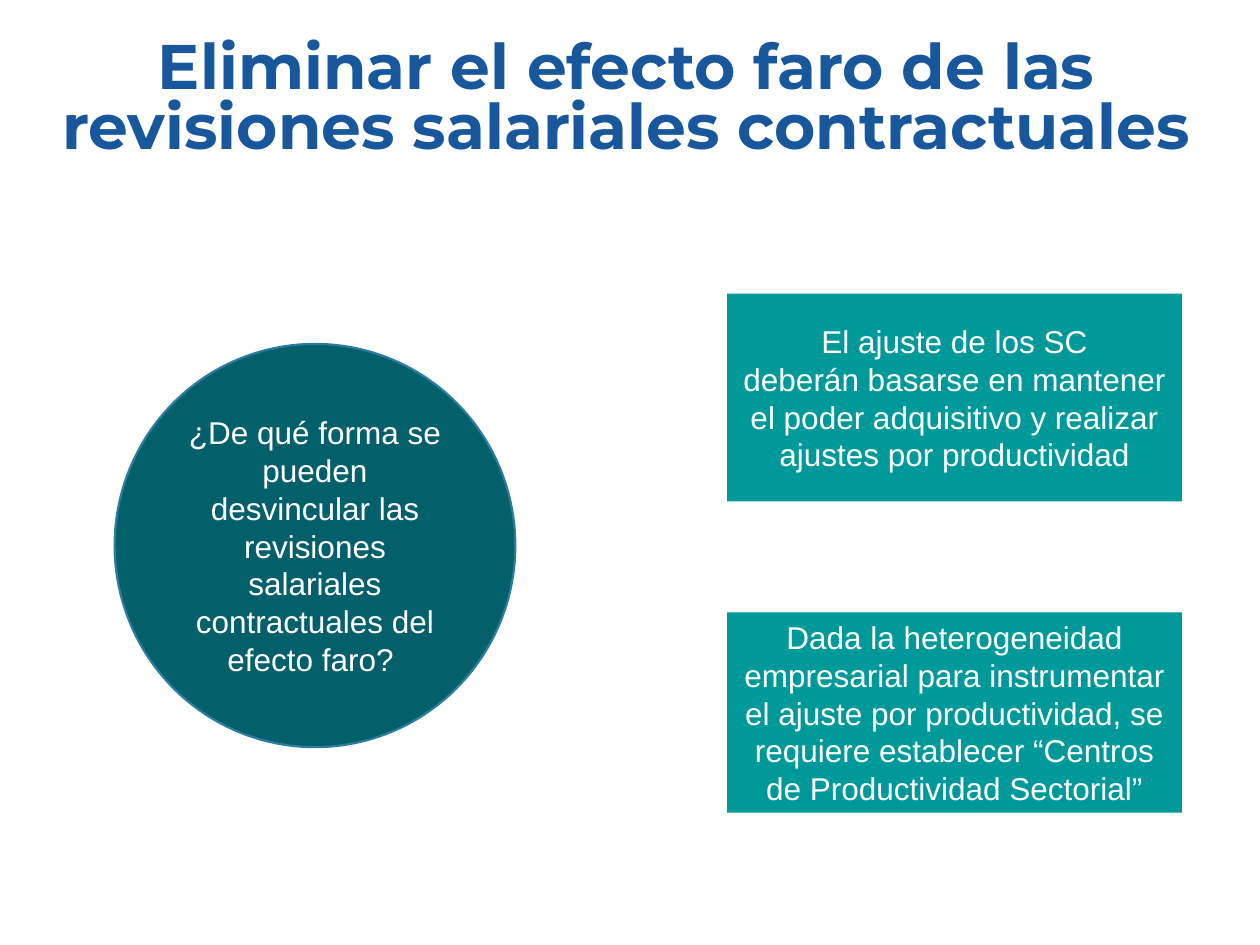
from pptx import Presentation
from pptx.dml.color import RGBColor
from pptx.enum import shapes, text
from pptx.util import Inches, Pt

BLUE = RGBColor(0x18, 0x57, 0x9B)
DARK = RGBColor(0x03, 0x60, 0x6A)
EDGE = RGBColor(0x2C, 0x7C, 0x9F)
TEAL = RGBColor(0x00, 0x99, 0x99)
WHITE = RGBColor(0xFF, 0xFF, 0xFF)

HEAD = {"name": "Montserrat", "size": Pt(36), "bold": True}
BODY = {"name": "Arial", "size": Pt(18), "bold": False}


def write(frame, lines, font, color, gap=None):
    """Fill a text frame with centred paragraphs in one format."""
    frame.word_wrap = True
    frame.auto_size = text.MSO_AUTO_SIZE.NONE
    frame.vertical_anchor = text.MSO_ANCHOR.MIDDLE
    frame.text = "\n".join(lines)
    for para in frame.paragraphs:
        para.alignment = text.PP_ALIGN.CENTER
        para.line_spacing = gap
        for run in para.runs:
            for key, value in font.items():
                setattr(run.font, key, value)
            run.font.color.rgb = color


def add_title(slide, box, line):
    title = slide.shapes.title
    for key, value in zip(("left", "top", "width", "height"), box):
        setattr(title, key, Inches(value))
    write(title.text_frame, [line], HEAD, BLUE, 0.8)


def add_panel(slide, kind, box, fill, lines, edge=None):
    shape = slide.shapes.add_shape(kind, *map(Inches, box))
    shape.shadow.inherit = False
    shape.fill.solid()
    shape.fill.fore_color.rgb = fill
    if edge is None:
        shape.line.fill.background()
    else:
        shape.line.color.rgb = edge
        shape.line.width = Pt(1.25)
    write(shape.text_frame, lines, BODY, WHITE)


def add_question(slide, box):
    add_panel(slide, shapes.MSO_SHAPE.OVAL, box, DARK, [
        "¿De qué forma se pueden desvincular las revisiones salariales "
        "contractuales del efecto faro? "], EDGE)


def add_answers(slide, left, width):
    answers = [
        (2.33, 1.65, ["El ajuste de los SC",
                      "deberán basarse en mantener el poder adquisitivo "
                      "y realizar ajustes por productividad"]),
        (4.86, 1.59, ["Dada la heterogeneidad empresarial para instrumentar "
                      "el ajuste por productividad, se requiere establecer "
                      "“Centros de Productividad Sectorial”"]),
    ]
    for top, height, lines in answers:
        add_panel(slide, shapes.MSO_SHAPE.RECTANGLE,
                  (left, top, width, height), TEAL, lines)


def main():
    deck = Presentation()
    deck.slide_width, deck.slide_height = Inches(10), Inches(7.5)
    slide = deck.slides.add_slide(deck.slide_layouts[5])  # title only

    # Heading
    add_title(slide, (0.16, 0.33, 9.62, 0.95),
              "Eliminar el efecto faro de las "
              "revisiones salariales contractuales")
    # Question on the left, answers on the right
    add_question(slide, (0.91, 2.73, 3.18, 3.2))
    add_answers(slide, 5.77, 3.61)

    deck.save("out.pptx")


if __name__ == "__main__":
    main()
